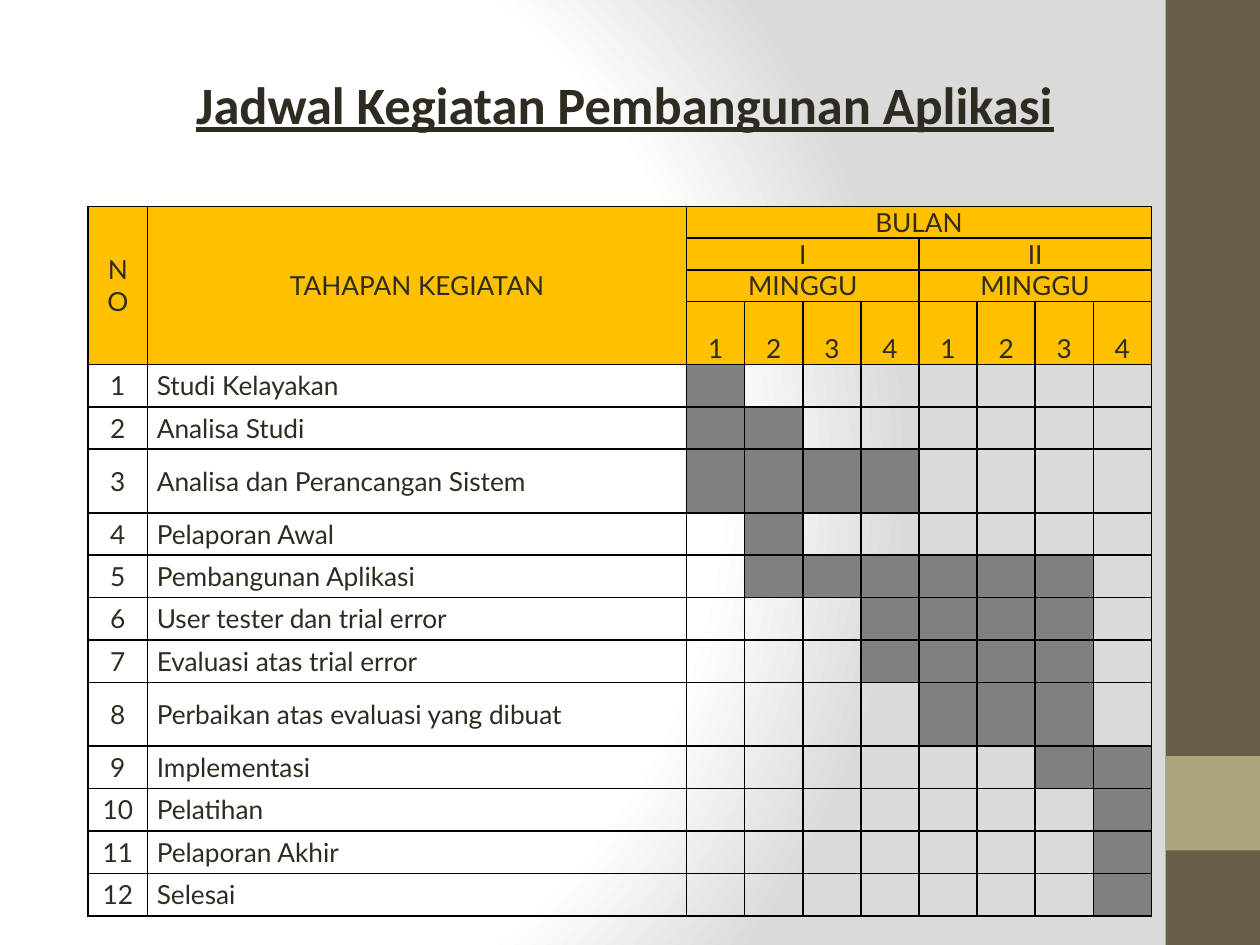
from lxml import etree
from pptx import Presentation
from pptx.dml.color import RGBColor
from pptx.enum.shapes import MSO_SHAPE
from pptx.enum.text import MSO_ANCHOR, PP_ALIGN
from pptx.oxml import parse_xml
from pptx.oxml.ns import nsdecls, qn
from pptx.util import Inches, Pt

RECTANGLE = MSO_SHAPE.RECTANGLE
MIDDLE, BOTTOM = MSO_ANCHOR.MIDDLE, MSO_ANCHOR.BOTTOM
LEFT, CENTER = PP_ALIGN.LEFT, PP_ALIGN.CENTER

INK, GOLD, GREY = "2F2B20", "FFC000", "808080"
TABLE_SIZE = 15
FIRST_WEEK, WEEKS_PER_MONTH = 2, 4
WEEKS_WIDTH, BODY_HEIGHT = 3.69, 4.38
COLUMN_WIDTHS = [0.47, 4.28] + [WEEKS_WIDTH / 8] * 8
HEADER_HEIGHTS = [0.25, 0.25, 0.25, 0.5]
HEADER_ROWS = len(HEADER_HEIGHTS)

# Header cells: row, column, rows spanned, columns spanned, text, anchor
HEADERS = [
    (0, 0, 4, 1, "NO", MIDDLE),
    (0, 1, 4, 1, "TAHAPAN KEGIATAN", MIDDLE),
    (0, 2, 1, 8, "BULAN", BOTTOM),
]

# Activity, first and last week in progress, relative row height
ACTIVITIES = [
    ("Studi Kelayakan", 1, 1, 1),
    ("Analisa Studi", 1, 2, 1),
    ("Analisa dan Perancangan Sistem", 1, 4, 1.5),
    ("Pelaporan Awal", 2, 2, 1),
    ("Pembangunan Aplikasi", 2, 7, 1),
    ("User tester dan trial error", 4, 7, 1),
    ("Evaluasi atas trial error", 4, 7, 1),
    ("Perbaikan atas evaluasi yang dibuat", 5, 7, 1.5),
    ("Implementasi", 7, 8, 1),
    ("Pelatihan", 8, 8, 1),
    ("Pelaporan Akhir", 8, 8, 1),
    ("Selesai", 8, 8, 1),
]


def color(value):
    return RGBColor.from_string(value)


def set_background(page):
    page.background.fill.gradient()
    stops = "".join(
        f'<a:gs pos="{position}"><a:srgbClr val="{value}"/></a:gs>'
        for position, value in [(0, "FFFFFF"), (75000, "FFFFFF"), (100000, "DADADA")]
    )
    gradient = parse_xml(
        f'<a:gradFill {nsdecls("a")} rotWithShape="1"><a:gsLst>{stops}</a:gsLst>'
        '<a:path path="circle"><a:fillToRect l="20000" t="50000" r="100000" b="50000"/>'
        "</a:path></a:gradFill>"
    )
    default = page.element.find(".//" + qn("a:gradFill"))
    default.getparent().replace(default, gradient)


def add_block(page, left, top, width, height, fill):
    block = page.shapes.add_shape(
        RECTANGLE, Inches(left), Inches(top), Inches(width), Inches(height))
    block.shadow.inherit = False
    block.fill.solid()
    block.fill.fore_color.rgb = color(fill)
    block.line.fill.background()


def write(frame, text, size, font, align):
    para = frame.paragraphs[0]
    para.text = text
    para.alignment = align
    span = para.runs[0]
    span.font.size = Pt(size)
    span.font.name = font
    span.font.color.rgb = color(INK)
    return span


def add_title(page, text):
    box = page.shapes.add_textbox(Inches(0.59), Inches(0.39), Inches(8.74), Inches(0.86))
    box.text_frame.word_wrap = True
    box.text_frame.vertical_anchor = MIDDLE
    span = write(box.text_frame, text, 30, "Calibri", CENTER)
    span.font.bold = True
    span.font.underline = True


def format_cell(cell):
    """Clear the style's fill, draw thin black borders and tighten the margins."""
    cell.margin_left = cell.margin_right = Pt(5.4)
    cell.margin_top = cell.margin_bottom = 0
    properties = cell._tc.get_or_add_tcPr()
    for side in ("lnL", "lnR", "lnT", "lnB"):
        properties.append(parse_xml(
            f'<a:{side} {nsdecls("a")} w="{Pt(1)}"><a:solidFill>'
            f'<a:srgbClr val="000000"/></a:solidFill></a:{side}>'))
    cell.fill.background()
    # Empty cells keep the table's text size, so that rows do not grow
    etree.SubElement(cell.text_frame.paragraphs[0]._p, qn("a:endParaRPr"),
                     sz=str(TABLE_SIZE * 100))


def fill_cell(cell, fill):
    cell.fill.solid()
    cell.fill.fore_color.rgb = color(fill)


def write_cell(cell, text, align=CENTER, anchor=MIDDLE):
    cell.vertical_anchor = anchor
    write(cell.text_frame, text, TABLE_SIZE, "Lato", align)


def header_cells():
    cells = list(HEADERS)
    for month, name in enumerate(["I", "II"]):
        start = FIRST_WEEK + month * WEEKS_PER_MONTH
        cells.append((1, start, 1, WEEKS_PER_MONTH, name, BOTTOM))
        cells.append((2, start, 1, WEEKS_PER_MONTH, "MINGGU", BOTTOM))
        for week in range(WEEKS_PER_MONTH):
            cells.append((3, start + week, 1, 1, str(week + 1), BOTTOM))
    return cells


def add_schedule(page):
    shares = [share for *_, share in ACTIVITIES]
    heights = HEADER_HEIGHTS + [BODY_HEIGHT * share / sum(shares) for share in shares]
    table = page.shapes.add_table(
        len(heights), len(COLUMN_WIDTHS), Inches(0.7), Inches(1.64),
        Inches(sum(COLUMN_WIDTHS)), Inches(sum(heights))).table
    table.first_row = False
    table.horz_banding = False
    for column, width in zip(table.columns, COLUMN_WIDTHS):
        column.width = Inches(width)
    for row, height in zip(table.rows, heights):
        row.height = Inches(height)
    for cell in table.iter_cells():
        format_cell(cell)

    # Header
    for row, column, rows, columns, text, anchor in header_cells():
        cell = table.cell(row, column)
        if rows * columns > 1:
            cell.merge(table.cell(row + rows - 1, column + columns - 1))
        fill_cell(cell, GOLD)
        write_cell(cell, text, anchor=anchor)

    # Activities with their weeks
    for number, (name, first, last, _) in enumerate(ACTIVITIES, 1):
        row = HEADER_ROWS + number - 1
        write_cell(table.cell(row, 0), str(number))
        write_cell(table.cell(row, 1), name, LEFT)
        for week in range(first, last + 1):
            fill_cell(table.cell(row, FIRST_WEEK + week - 1), GREY)


def main():
    deck = Presentation()
    deck.slide_width, deck.slide_height = Inches(10), Inches(7.5)
    page = deck.slides.add_slide(deck.slide_layouts[6])
    set_background(page)
    # Side band
    add_block(page, 9.25, 0, 0.75, 7.5, "675E47")
    add_block(page, 9.25, 6, 0.75, 0.75, "A9A57C")
    add_schedule(page)
    add_title(page, "Jadwal Kegiatan Pembangunan Aplikasi")
    deck.save("out.pptx")


if __name__ == "__main__":
    main()
